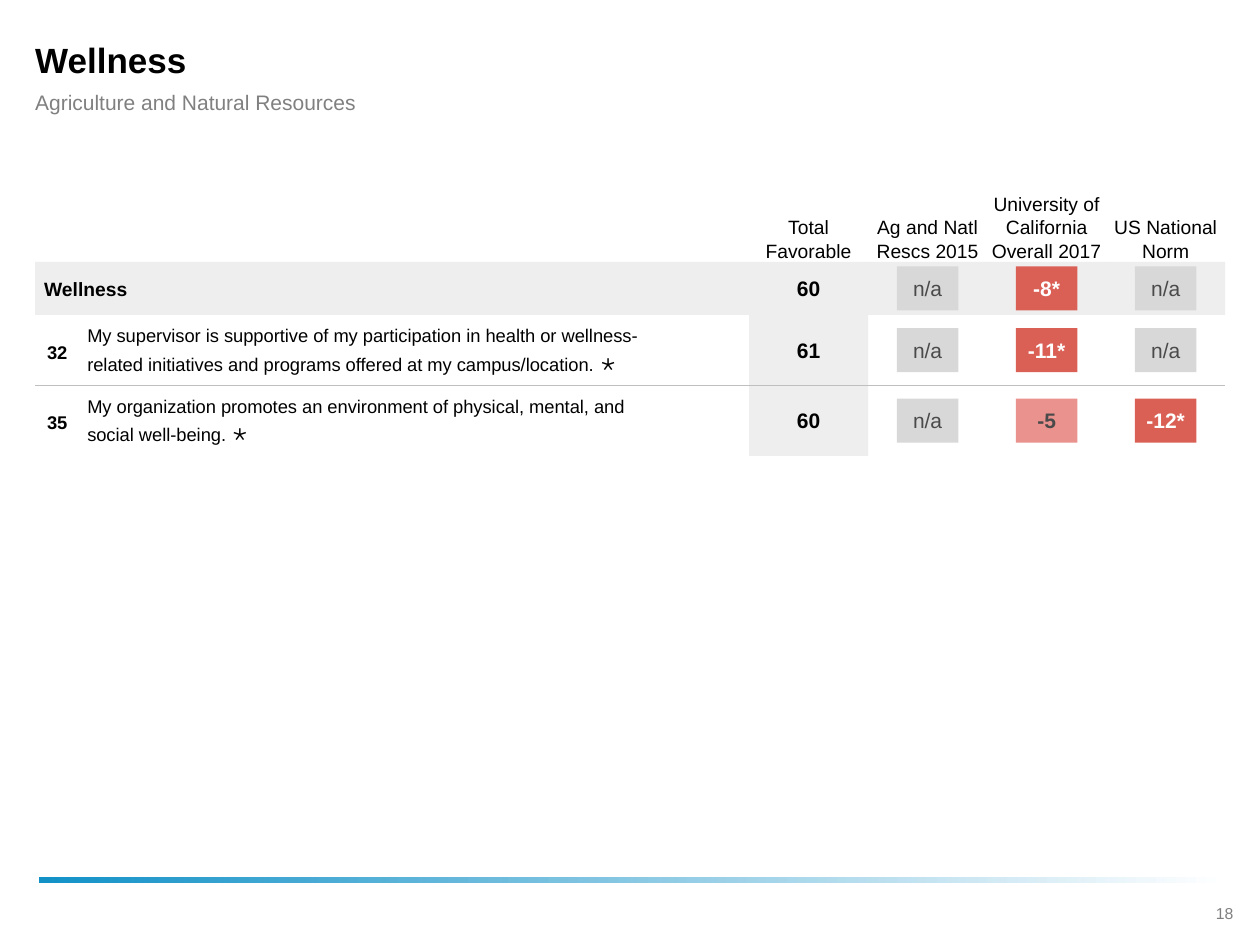
from dataclasses import dataclass

from lxml import etree
from pptx import Presentation
from pptx.dml.color import RGBColor
from pptx.enum.shapes import MSO_CONNECTOR, MSO_SHAPE
from pptx.enum.text import MSO_ANCHOR, MSO_AUTO_SIZE, PP_ALIGN
from pptx.oxml.ns import qn
from pptx.util import Cm, Pt

RECT = MSO_SHAPE.RECTANGLE
LINE = MSO_CONNECTOR.STRAIGHT
TOP, MID, LOW = MSO_ANCHOR.TOP, MSO_ANCHOR.MIDDLE, MSO_ANCHOR.BOTTOM
LEFT, MIDDLE = PP_ALIGN.LEFT, PP_ALIGN.CENTER
FIXED = MSO_AUTO_SIZE.NONE

EDGE, WIDTH = 0.71, 23.98
COL, STEP = 15.1, 2.4
HEAD_TOP, BODY_TOP = 2.46, 5.28
CHIP_W, CHIP_H = 1.24, 0.89
BLACK, GREY, PALE, WHITE = "000000", "4A4A4A", "EEEEEE", "FFFFFF"


@dataclass
class Box:
    x: float
    y: float
    w: float
    h: float


@dataclass
class Style:
    size: float
    color: str = BLACK
    bold: bool = False
    align: PP_ALIGN = MIDDLE
    anchor: MSO_ANCHOR = MID
    left: float = 0
    right: float = 0
    wrap: bool = True


@dataclass
class Score:
    text: str
    fill: str = "D8D8D8"
    color: str = GREY
    bold: bool = False


@dataclass
class Row:
    code: str
    text: str
    total: str
    high: float
    scores: list[Score]


NONE = Score("n/a")
HEADS = ["Total Favorable", "Ag and Natl Rescs 2015",
         "University of California Overall 2017", "US National Norm"]


def low(text: str) -> Score:
    return Score(text, "DA6056", WHITE, True)


ROWS = [
    Row("", "Wellness", "60", 1.07, [NONE, low("-8*"), NONE]),
    Row("32", "My supervisor is supportive of my participation in health or "
        "wellness-related initiatives and programs offered at my "
        "campus/location.", "61", 1.42, [NONE, low("-11*"), NONE]),
    Row("35", "My organization promotes an environment of physical, mental, "
        "and social well-being.", "60", 1.42,
        [NONE, Score("-5", "E9928E", GREY, True), low("-12*")]),
]


def paint(code: str) -> RGBColor:
    return RGBColor.from_string(code)


def place(box: Box) -> list:
    return [Cm(v) for v in (box.x, box.y, box.w, box.h)]


def put(item, values: dict) -> None:
    for name, value in values.items():
        setattr(item, name, value)


def write(shape, text: str, style: Style, mark: str = "") -> None:
    frame = shape.text_frame
    put(frame, {
        "margin_left": Cm(style.left), "margin_right": Cm(style.right),
        "margin_top": 0, "margin_bottom": 0, "word_wrap": style.wrap,
        "auto_size": FIXED, "vertical_anchor": style.anchor,
    })
    para = frame.paragraphs[0]
    para.alignment = style.align
    for part, size in ((text, style.size), (mark, 14)):
        if part:
            run = para.add_run()
            run.text = part
            put(run.font, {"name": "Arial", "size": Pt(size),
                           "bold": style.bold})
            run.font.color.rgb = paint(style.color)


def label(slide, box: Box, text: str, style: Style, mark: str = "") -> None:
    write(slide.shapes.add_textbox(*place(box)), text, style, mark)


def block(slide, box: Box, fill: str):
    shape = slide.shapes.add_shape(RECT, *place(box))
    shape.shadow.inherit = False
    shape.fill.solid()
    shape.fill.fore_color.rgb = paint(fill)
    shape.line.fill.background()
    return shape


def rule(slide, y: float) -> None:
    line = slide.shapes.add_connector(
        LINE, Cm(EDGE), Cm(y), Cm(EDGE + WIDTH), Cm(y))
    line.line.color.rgb = paint("BFBFBF")
    line.line.width = Pt(0.75)
    etree.SubElement(line.element.spPr, qn("a:effectLst"))


def fade(slide, box: Box) -> None:
    bar = block(slide, box, WHITE)
    bar.fill.gradient()
    bar.fill.gradient_angle = 0
    for stop, spot, code in zip(bar.fill.gradient_stops, (0, 1),
                                ("1291C7", WHITE)):
        stop.position = spot
        stop.color.rgb = paint(code)


def draw_row(slide, row: Row, y: float) -> None:
    mid = y + row.high / 2
    block(slide, Box(COL, y, STEP, row.high), PALE)
    if row.code:
        label(slide, Box(EDGE, mid - 0.25, 0.89, 0.56), row.code,
              Style(10.5, bold=True))
        label(slide, Box(1.58, mid - 0.58, 12.95, 1.16), row.text,
              Style(10.5, align=LEFT, left=0.18, right=0.89), " ⋆")
    else:
        name = Box(EDGE, y, COL - EDGE, row.high)
        block(slide, name, PALE)
        for i in range(1, len(HEADS)):
            block(slide, Box(COL + i * STEP, y, STEP, row.high), PALE)
        label(slide, name, row.text,
              Style(11, bold=True, align=LEFT, left=0.18, right=0.18))
    label(slide, Box(COL, mid - 0.24, STEP, 0.48), row.total,
          Style(12, bold=True))
    for i, score in enumerate(row.scores, 1):
        x = COL + i * STEP + (STEP - CHIP_W) / 2
        chip = block(slide, Box(x, mid - CHIP_H / 2, CHIP_W, CHIP_H),
                     score.fill)
        write(chip, score.text,
              Style(12, score.color, score.bold, wrap=False))


def main() -> None:
    deck = Presentation()
    put(deck, {"slide_width": Cm(25.4), "slide_height": Cm(19.05)})
    slide = deck.slides.add_slide(deck.slide_layouts[5])

    fade(slide, Box(0.79, 17.68, 23.93, 0.13))
    label(slide, Box(24.03, 18.08, 1.32, 0.64), "18",
          Style(9, "7F7F7F", anchor=MID))

    title = slide.shapes.title
    put(title, dict(zip(("left", "top", "width", "height"),
                        place(Box(EDGE, 0.71, WIDTH, 0.97)))))
    write(title, "Wellness", Style(20, bold=True, align=LEFT, right=0.89))
    label(slide, Box(EDGE, 1.8, WIDTH, 0.53),
          "Agriculture and Natural Resources",
          Style(12, "808080", align=LEFT, right=0.89))

    for i, head in enumerate(HEADS):
        label(slide, Box(COL + i * STEP, HEAD_TOP, STEP, BODY_TOP - HEAD_TOP),
              head, Style(11, anchor=LOW))

    y = BODY_TOP
    for row in ROWS:
        draw_row(slide, row, y)
        y += row.high
    rule(slide, y - ROWS[-1].high)
    deck.save("out.pptx")


if __name__ == "__main__":
    main()
